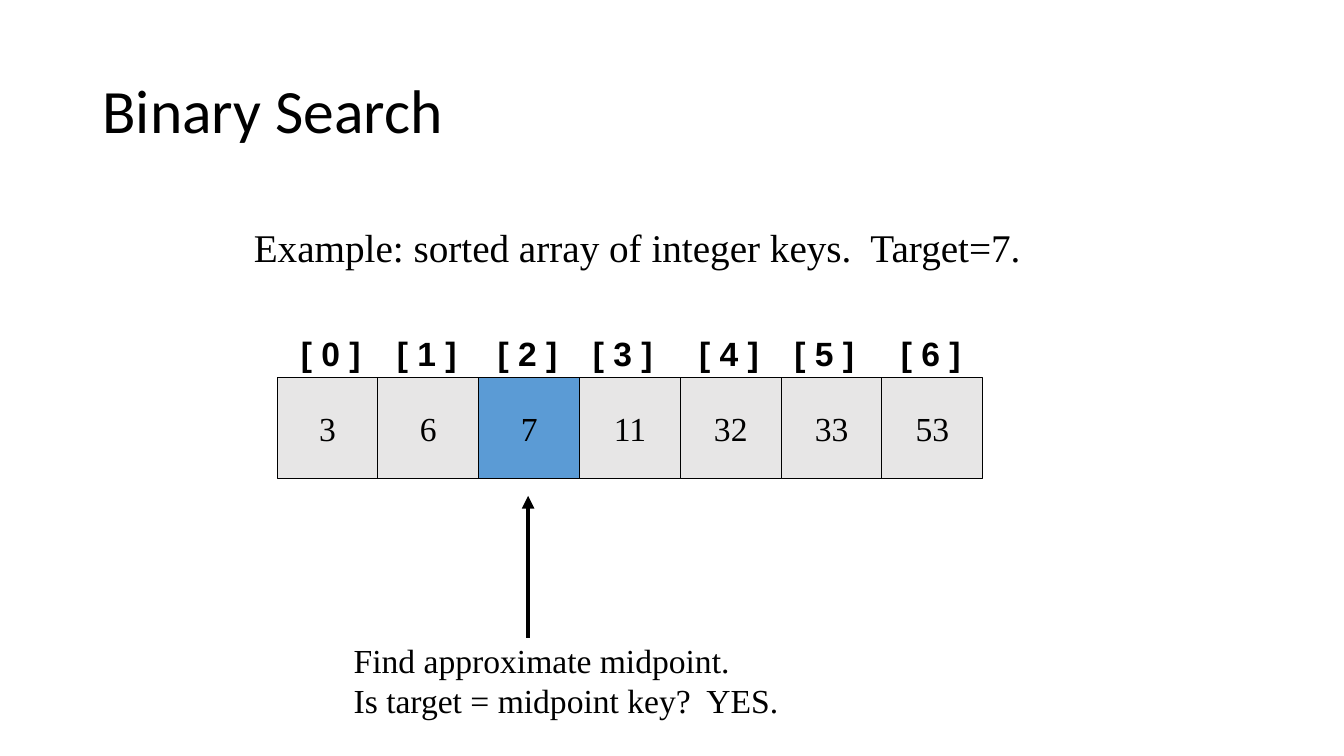
from dataclasses import dataclass
from lxml import etree
from pptx import Presentation
from pptx.dml.color import RGBColor
from pptx.enum.shapes import MSO_CONNECTOR, MSO_SHAPE
from pptx.enum.text import MSO_ANCHOR, MSO_AUTO_SIZE, PP_ALIGN
from pptx.oxml.ns import qn
from pptx.util import Pt

LEFT, CENTER = PP_ALIGN.LEFT, PP_ALIGN.CENTER
MIDDLE = MSO_ANCHOR.MIDDLE
GROW = MSO_AUTO_SIZE.SHAPE_TO_FIT_TEXT
RECT = MSO_SHAPE.RECTANGLE
STRAIGHT = MSO_CONNECTOR.STRAIGHT

TITLE = "Binary Search"
INTRO = "Example: sorted array of integer keys.  Target=7."
KEYS = [3, 6, 7, 11, 32, 33, 53]
MID = 2
NOTES = ["Find approximate midpoint.", "Is target = midpoint key?  YES."]

CELL = 72
ROW_X, ROW_Y = 198, 270
TAG_Y, TAG_W, TAG_H = 234, 57.6, 36
TAG_GAPS = [9.5, 6, 6, 2, 6, 2, 6]
TITLE_BOX = (66, 29, 828, 104.4)
INTRO_BOX = (174.24, 156.24, 565.2, 242.64)
NOTE_BOX = (245.52, 453.6, 320.4, 65.52)
ARROW_X, ARROW_TOP, ARROW_END = 377.28, 354.24, 455.76


@dataclass(frozen=True)
class Theme:
    ink: RGBColor = RGBColor.from_string("000000")
    cell: RGBColor = RGBColor.from_string("E7E6E6")
    focus: RGBColor = RGBColor.from_string("5B9BD5")
    head: str = "Calibri"
    body: str = "Times New Roman"
    tag: str = "Arial"
    title: int = 44
    intro: int = 28
    text: int = 24
    edge: float = 0.75
    arrow: int = 3


THEME = Theme()


def points(*sizes):
    return [Pt(size) for size in sizes]


def write(frame, lines, font, size, align=LEFT, bold=False):
    for index, line in enumerate(lines):
        para = frame.paragraphs[0] if index == 0 else frame.add_paragraph()
        para.alignment = align
        run = para.add_run()
        run.text = line
        run.font.name = font
        run.font.size = Pt(size)
        run.font.bold = bold
        run.font.color.rgb = THEME.ink


def add_text(slide, box, lines, font, size, align=LEFT, bold=False):
    frame = slide.shapes.add_textbox(*points(*box)).text_frame
    frame.word_wrap = False
    frame.auto_size = GROW
    write(frame, lines, font, size, align, bold)


def add_title(slide):
    title = slide.shapes.title
    title.left, title.top, title.width, title.height = points(*TITLE_BOX)
    frame = title.text_frame
    frame.vertical_anchor = MIDDLE
    write(frame, [TITLE], THEME.head, THEME.title)
    frame.paragraphs[0].line_spacing = 0.9


def add_cell(slide, index, key):
    left = ROW_X + index * CELL
    cell = slide.shapes.add_shape(RECT, *points(left, ROW_Y, CELL, CELL))
    cell.shadow.inherit = False
    cell.fill.solid()
    cell.fill.fore_color.rgb = THEME.focus if index == MID else THEME.cell
    cell.line.color.rgb = THEME.ink
    cell.line.width = Pt(THEME.edge)
    frame = cell.text_frame
    frame.word_wrap = False
    frame.vertical_anchor = MIDDLE
    write(frame, [str(key)], THEME.body, THEME.text, CENTER)


def add_tag(slide, index, gap):
    box = (ROW_X + index * CELL + gap, TAG_Y, TAG_W, TAG_H)
    add_text(slide, box, [f"[ {index} ]"], THEME.tag, THEME.text, CENTER, True)


def add_arrow(slide):
    ends = points(ARROW_X, ARROW_TOP, ARROW_X, ARROW_END)
    arrow = slide.shapes.add_connector(STRAIGHT, *ends)
    arrow.line.color.rgb = THEME.ink
    arrow.line.width = Pt(THEME.arrow)
    etree.SubElement(arrow.line._get_or_add_ln(), qn("a:headEnd"), type="triangle")
    etree.SubElement(arrow._element.spPr, qn("a:effectLst"))


def main():
    deck = Presentation()
    deck.slide_width, deck.slide_height = points(960, 540)
    slide = deck.slides.add_slide(deck.slide_layouts[5])
    add_title(slide)
    add_text(slide, INTRO_BOX, [INTRO], THEME.body, THEME.intro)
    for index, (key, gap) in enumerate(zip(KEYS, TAG_GAPS)):
        add_cell(slide, index, key)
        add_tag(slide, index, gap)
    add_arrow(slide)
    add_text(slide, NOTE_BOX, NOTES, THEME.body, THEME.text)
    deck.save("out.pptx")


if __name__ == "__main__":
    main()
